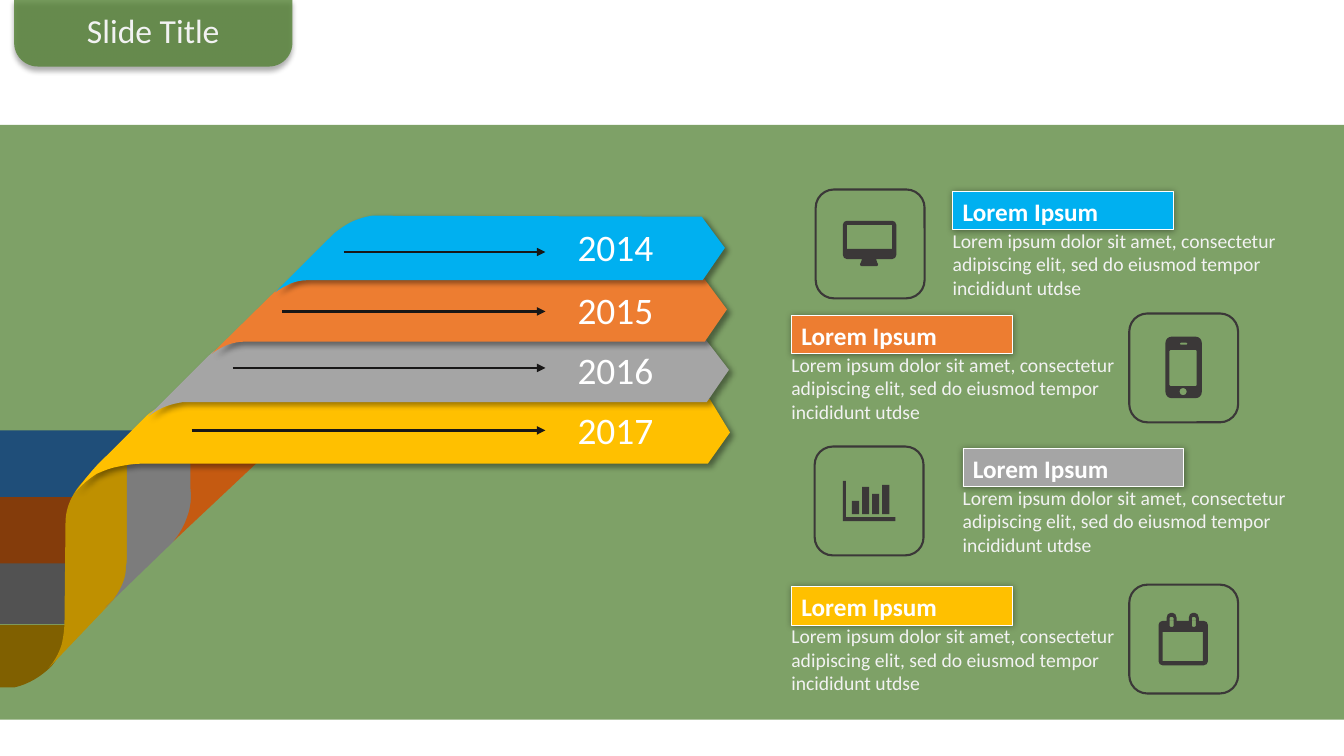
"""Build the four-year ribbon timeline slide."""
from lxml import etree
from pptx import Presentation
from pptx.dml.color import RGBColor
from pptx.enum.shapes import MSO_CONNECTOR, MSO_SHAPE
from pptx.enum.text import MSO_ANCHOR, PP_ALIGN
from pptx.oxml.ns import qn
from pptx.util import Inches, Pt

RECT, ROUND_RECT = MSO_SHAPE.RECTANGLE, MSO_SHAPE.ROUNDED_RECTANGLE
TAB = MSO_SHAPE.ROUND_2_SAME_RECTANGLE
STRAIGHT = MSO_CONNECTOR.STRAIGHT
TOP, LEFT, CENTER = MSO_ANCHOR.TOP, PP_ALIGN.LEFT, PP_ALIGN.CENTER
FONT, GREEN, DARK, INK = "Calibri", "548235", "3B3838", "181717"
WHITE, PALE = "FFFFFF", "F2F2F2"
RIBBON_SHADOW, LABEL_SHADOW, TITLE_SHADOW = (4, 3, 45), (5, 0, 0), (4, 3, 90)
HEADING = "Lorem Ipsum"
BODY = ("Lorem ipsum dolor sit amet, consectetur adipiscing elit, "
        "sed do eiusmod tempor incididunt utdse")

# Outline entries: two numbers are a corner, six are a curve.
TAILS = [
    ("525252", (0, 5.57, 0.68, 0.62)),
    ("843C0B", (0, 4.93, 0.83, 0.66)),
    ("1F4E79", (0, 4.27, 1.67, 0.66)),
]
TAIL_END = ("806000", [(0.68, 6.2), (0, 6.2), (0, 6.82), (0.14, 6.82),
            (0.28, 6.79, 0.41, 6.71, 0.51, 6.61), (0.61, 6.49, 0.67, 6.35, 0.68, 6.2)])
FOLDS = [
    ("BF9000", [(1.27, 4.58), (1.26, 5.52), (1.27, 5.62, 1.25, 5.72, 1.21, 5.81),
     (1.18, 5.88, 1.14, 5.94, 1.09, 5.99), (0.48, 6.63),
     (0.54, 6.56, 0.58, 6.49, 0.61, 6.4), (0.63, 6.32, 0.64, 6.23, 0.64, 6.15),
     (0.65, 5.19), (0.65, 5.1, 0.67, 5.02, 0.71, 4.94),
     (0.74, 4.88, 0.78, 4.82, 0.83, 4.77), (0.88, 4.71, 0.94, 4.65, 1.02, 4.62),
     (1.1, 4.59, 1.18, 4.57, 1.27, 4.58)]),
    ("7C7C7C", [(1.9, 4.52), (1.9, 4.99), (1.89, 5.06, 1.86, 5.14, 1.83, 5.21),
     (1.79, 5.3, 1.72, 5.38, 1.65, 5.44), (1.04, 6.03),
     (1.12, 5.97, 1.18, 5.88, 1.22, 5.78), (1.24, 5.73, 1.25, 5.68, 1.25, 5.62),
     (1.26, 5.57, 1.26, 5.52, 1.26, 5.46), (1.26, 4.53)]),
    ("C55A11", [(2.55, 4.59), (1.72, 5.37), (1.78, 5.3, 1.83, 5.21, 1.86, 5.12),
     (1.89, 5.04, 1.9, 4.94, 1.89, 4.85), (1.89, 4.53), (2.55, 4.53)]),
]
RIBBONS = [
    ("FFC000", [(1.83, 3.96), (1.76, 3.97, 1.69, 3.99, 1.63, 4.01),
     (1.55, 4.05, 1.47, 4.1, 1.41, 4.17), (1.07, 4.51),
     (0.99, 4.58, 0.91, 4.67, 0.84, 4.76), (0.81, 4.8, 0.78, 4.84, 0.75, 4.88),
     (0.81, 4.81, 0.88, 4.75, 0.96, 4.7), (1.03, 4.67, 1.1, 4.64, 1.17, 4.63),
     (1.26, 4.61, 1.34, 4.6, 1.43, 4.6), (7.02, 4.6), (7.24, 4.29), (7.04, 3.96)]),
    ("A5A5A5", [(2.45, 3.37), (2.38, 3.37, 2.31, 3.39, 2.24, 3.42),
     (2.17, 3.45, 2.12, 3.48, 2.07, 3.53), (1.47, 4.13),
     (1.53, 4.09, 1.59, 4.05, 1.65, 4.03), (1.7, 4.01, 1.76, 4, 1.81, 3.99),
     (7.01, 3.99), (7.23, 3.67), (7, 3.37)]),
    ("ED7D31", [(3.08, 2.75), (3, 2.76, 2.93, 2.78, 2.86, 2.81),
     (2.79, 2.84, 2.74, 2.88, 2.69, 2.93), (2.1, 3.51),
     (2.15, 3.47, 2.21, 3.44, 2.26, 3.42), (2.32, 3.4, 2.37, 3.39, 2.43, 3.39),
     (6.99, 3.39), (7.21, 3.07), (6.98, 2.76)]),
    ("00B0F0", [(3.69, 2.14), (3.62, 2.15, 3.56, 2.17, 3.49, 2.2),
     (3.43, 2.23, 3.37, 2.27, 3.31, 2.32), (2.73, 2.9),
     (2.78, 2.86, 2.83, 2.84, 2.89, 2.81), (2.94, 2.79, 3, 2.78, 3.05, 2.78),
     (6.97, 2.78), (7.19, 2.46), (6.96, 2.15)]),
]
YEARS = [("2014", 2.17), ("2015", 2.8), ("2016", 3.39), ("2017", 3.99)]
ARROWS = [(1.9, 4.27), (2.31, 3.65), (2.8, 3.09), (3.41, 2.5)]


def rounded(left, top, right, bottom, radius=0.0):
    """Return the outline of a box, with rounded corners if a radius is given."""
    if not radius:
        return [(left, top), (right, top), (right, bottom), (left, bottom)]
    r, k = radius, radius * 0.45
    return [(left + r, top), (right - r, top),
            (right - k, top, right, top + k, right, top + r), (right, bottom - r),
            (right, bottom - k, right - k, bottom, right - r, bottom), (left + r, bottom),
            (left + k, bottom, left, bottom - k, left, bottom - r), (left, top + r),
            (left, top + k, left + k, top, left + r, top)]


MONITOR = [rounded(8.36, 2.19, 8.89, 2.57, 0.04), rounded(8.4, 2.23, 8.85, 2.47),
           [(8.55, 2.57), (8.69, 2.57), (8.69, 2.59, 8.71, 2.62, 8.71, 2.62),
            (8.71, 2.64, 8.7, 2.64, 8.69, 2.64), (8.55, 2.64),
            (8.54, 2.64, 8.53, 2.64, 8.53, 2.62), (8.53, 2.62, 8.55, 2.59, 8.55, 2.57)]]
PHONE = [rounded(11.56, 3.34, 11.92, 3.95, 0.06), rounded(11.6, 3.47, 11.87, 3.83, 0.01),
         rounded(11.7, 3.4, 11.78, 3.42, 0.01), rounded(11.7, 3.85, 11.77, 3.92, 0.03)]
CHART = [[(8.88, 5.17), (8.36, 5.17), (8.36, 4.77), (8.39, 4.77), (8.39, 5.13), (8.88, 5.13)]]
CHART += [rounded(8.45 + 0.1 * i, top, 8.52 + 0.1 * i, 5.1)
          for i, top in enumerate((4.97, 4.83, 4.9, 4.81))]
CALENDAR = [rounded(11.49, 6.16, 11.98, 6.6, 0.04), rounded(11.53, 6.27, 11.93, 6.56)]
for ring in (11.57, 11.79):
    CALENDAR += [[(ring, 6.16), (ring, 6.13), (ring, 6.1, ring + 0.02, 6.08, ring + 0.04, 6.08),
                  (ring + 0.06, 6.08), (ring + 0.08, 6.08, ring + 0.1, 6.1, ring + 0.1, 6.13),
                  (ring + 0.1, 6.16)],
                 rounded(ring + 0.03, 6.12, ring + 0.07, 6.22, 0.01)]
CARDS = [("FFC000", 7.85, 5.82, 11.2, CALENDAR), ("00B0F0", 9.45, 1.9, 8.09, MONITOR),
         ("A5A5A5", 9.55, 4.45, 8.08, CHART), ("ED7D31", 7.85, 3.13, 11.2, PHONE)]


def color(value):
    """Turn a hex string into a colour."""
    return RGBColor.from_string(value)


def paint(shape, fill=None, line=None, width=0.5, shadow=None, alpha=None):
    """Set fill, outline and shadow of a shape."""
    shape.shadow.inherit = False
    if fill:
        shape.fill.solid()
        shape.fill.fore_color.rgb = color(fill)
    else:
        shape.fill.background()
    if line:
        shape.line.color.rgb = color(line)
        shape.line.width = Pt(width)
    else:
        shape.line.fill.background()
    properties = shape._element.spPr
    if alpha:
        tint = properties.find(qn("a:solidFill"))[0]
        etree.SubElement(tint, qn("a:alpha"), val=str(alpha * 1000))
    if shadow:
        blur, distance, angle = shadow
        outer = etree.SubElement(properties.find(qn("a:effectLst")), qn("a:outerShdw"),
                                 blurRad=str(Pt(blur)), dist=str(Pt(distance)),
                                 dir=str(angle * 60000), algn="ctr", rotWithShape="0")
        shade = etree.SubElement(outer, qn("a:srgbClr"), val="000000")
        etree.SubElement(shade, qn("a:alpha"), val="40000")
    return shape


def add_box(page, kind, place, **style):
    """Add a painted preset shape."""
    return paint(page.shapes.add_shape(kind, *map(Inches, place)), **style)


def add_outline(page, outlines, fill, shadow=None):
    """Add one filled freeform made of closed outlines with true curves."""
    builder = None
    for outline in outlines:
        ends = [(Inches(entry[-2]), Inches(entry[-1])) for entry in outline]
        if builder is None:
            builder = page.shapes.build_freeform(*ends[0], scale=1.0)
        else:
            builder.move_to(*ends[0])
        builder.add_line_segments(ends[1:], close=True)
    shape = builder.convert_to_shape()
    entries = [entry for outline in outlines for entry in outline[1:]]
    segments = list(shape._element.spPr.iter(qn("a:lnTo")))
    for entry, segment in zip(entries, segments):
        if len(entry) == 6:
            curve = etree.Element(qn("a:cubicBezTo"))
            for x, y in zip(entry[::2], entry[1::2]):
                etree.SubElement(curve, qn("a:pt"), x=str(Inches(x) - shape.left),
                                 y=str(Inches(y) - shape.top))
            segment.getparent().replace(segment, curve)
    paint(shape, fill, shadow=shadow)


def write(shape, text, size, ink, align=LEFT, bold=False):
    """Write one run of text into a shape."""
    frame = shape.text_frame
    frame.word_wrap = True
    frame.vertical_anchor = TOP
    para = frame.paragraphs[0]
    para.alignment = align
    span = para.add_run()
    span.text = text
    span.font.name, span.font.size, span.font.bold = FONT, Pt(size), bold
    span.font.color.rgb = color(ink)


def add_text(page, place, *text):
    """Add a text box."""
    write(page.shapes.add_textbox(*map(Inches, place)), *text)


def add_arrow(page, left, right, y):
    """Add a horizontal arrow."""
    arrow = page.shapes.add_connector(STRAIGHT, Inches(left), Inches(y), Inches(right), Inches(y))
    arrow.line.color.rgb = color(INK)
    arrow.line.width = Pt(2)
    etree.SubElement(arrow.line._get_or_add_ln(), qn("a:tailEnd"), type="triangle")
    etree.SubElement(arrow._element.spPr, qn("a:effectLst"))


def main():
    """Build and save the deck."""
    deck = Presentation()
    deck.slide_width, deck.slide_height = Inches(13.33), Inches(7.5)
    page = deck.slides.add_slide(deck.slide_layouts[6])
    add_box(page, RECT, (0, 1.24, 13.33, 5.9), fill=GREEN, alpha=75)
    add_outline(page, [TAIL_END[1]], TAIL_END[0])
    for fill, place in TAILS:
        add_box(page, RECT, place, fill=fill)
    for fill, outline in FOLDS:
        add_outline(page, [outline], fill)
    for fill, outline in RIBBONS:
        add_outline(page, [outline], fill, RIBBON_SHADOW)
    for year, top in YEARS:
        add_text(page, (5.16, top, 1.89, 0.55), year, 26.7, WHITE, CENTER)
    for fill, left, top, tile_left, icon in CARDS:
        label = add_box(page, RECT, (left, top, 2.19, 0.38), fill=fill, line=WHITE,
                        shadow=LABEL_SHADOW)
        write(label, HEADING, 18, WHITE, LEFT, True)
        add_text(page, (left - 0.1, top + 0.32, 3.65, 0.81), BODY, 14, PALE)
        add_box(page, ROUND_RECT, (tile_left, top - 0.02, 1.08, 1.08), line=DARK, width=1.5)
        add_outline(page, icon, DARK)
    for start, y in ARROWS:
        add_arrow(page, start, 5.41, y)
    tab = add_box(page, TAB, (0.14, -0.01, 2.76, 0.67), fill=GREEN, alpha=80, shadow=TITLE_SHADOW)
    tab.rotation = 180
    tab.adjustments[0], tab.adjustments[1] = 0.35, 0
    add_text(page, (0.14, 0.05, 2.76, 0.5), "Slide Title", 24, PALE, CENTER)
    deck.save("out.pptx")


if __name__ == "__main__":
    main()
